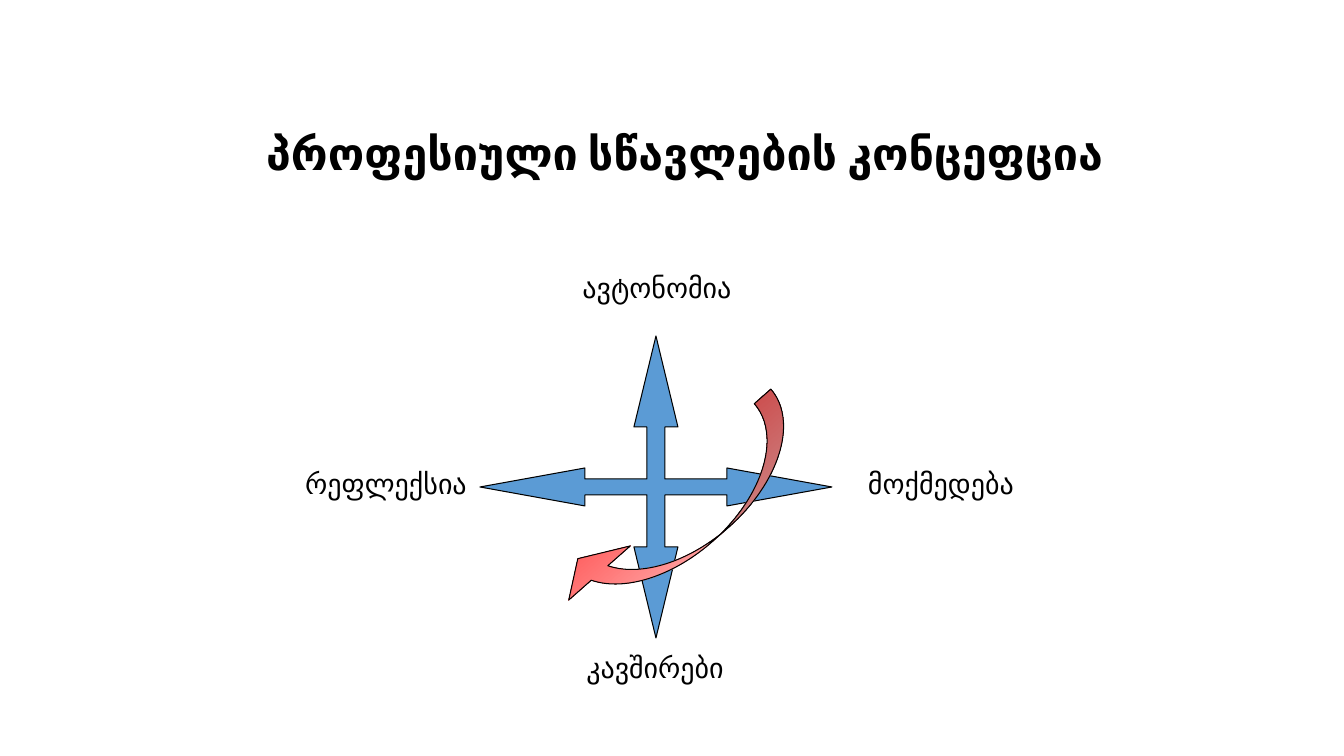
from pptx import Presentation
from pptx.dml.color import RGBColor
from pptx.enum.shapes import MSO_SHAPE
from pptx.enum.text import MSO_ANCHOR, MSO_AUTO_SIZE, PP_ALIGN
from pptx.util import Pt

PX = 914400 / 100.8
CURVED_ARROW = MSO_SHAPE.CURVED_DOWN_ARROW
TOP = MSO_ANCHOR.TOP
NO_FIT = MSO_AUTO_SIZE.NONE
CENTER = PP_ALIGN.CENTER
TITLE_ONLY = 5

BLACK = "000000"
BLUE = "5B9BD5"
WHITE = "FFFFFF"
RED = "FF0000"

LABEL_W, LABEL_H = 202, 44
LABELS = [
    ("ავტონომია", 556, 266, "Arial"),
    ("რეფლექსია", 285, 462, "Arial"),
    ("მოქმედება", 840, 462, "Arial"),
    ("კავშირები", 554, 646, "Calibri"),
]
CROSS_CENTER = (656, 487)
CROSS_QUARTER = [(0, 151), (22, 60), (9, 60), (9, 8), (71, 8), (71, 19), (176, 0)]


def px(n):
    return round(n * PX)


def rgb(value):
    return RGBColor.from_string(value)


def write(tf, text, size, font, bold=False):
    tf.word_wrap = True
    tf.auto_size = NO_FIT
    tf.vertical_anchor = TOP
    p = tf.paragraphs[0]
    p.alignment = CENTER
    r = p.add_run()
    r.text = text
    r.font.size = Pt(size)
    r.font.name = font
    r.font.bold = bold
    r.font.color.rgb = rgb(BLACK)
    return p


def set_title(s, text, x, y, w, h):
    sp = s.shapes.title
    sp.left, sp.top, sp.width, sp.height = px(x), px(y), px(w), px(h)
    p = write(sp.text_frame, text, 32, "Calibri", bold=True)
    p.line_spacing = 0.9


def add_label(s, text, x, y, font):
    sp = s.shapes.add_textbox(px(x), px(y), px(LABEL_W), px(LABEL_H))
    write(sp.text_frame, text, 20, font)


def outline(sp):
    sp.shadow.inherit = False
    sp.line.color.rgb = rgb(BLACK)
    sp.line.width = Pt(0.75)


def add_cross(s):
    cx, cy = CROSS_CENTER
    points = []
    for sx, sy, step in [(1, -1, 1), (1, 1, -1), (-1, 1, 1), (-1, -1, -1)]:
        points += [(cx + sx * dx, cy + sy * dy) for dx, dy in CROSS_QUARTER[::step][:-1]]
    builder = s.shapes.build_freeform(*points[0], scale=PX)
    builder.add_line_segments(points[1:], close=True)
    sp = builder.convert_to_shape()
    sp.fill.solid()
    sp.fill.fore_color.rgb = rgb(BLUE)
    outline(sp)


def add_curved_arrow(s, x, y, w, h, rotation):
    sp = s.shapes.add_shape(CURVED_ARROW, px(x), px(y), px(w), px(h))
    sp.rotation = rotation
    for i, value in enumerate([0.29, 1.08, 0.33]):
        sp.adjustments[i] = value
    sp.fill.gradient()
    sp.fill.gradient_angle = 270
    for stop, color, position in zip(sp.fill.gradient_stops, [WHITE, RED], [0, 1]):
        stop.color.rgb = rgb(color)
        stop.position = position
    outline(sp)


def main():
    prs = Presentation()
    prs.slide_width, prs.slide_height = px(1344), px(756)
    s = prs.slides.add_slide(prs.slide_layouts[TITLE_ONLY])
    set_title(s, "პროფესიული სწავლების კონცეფცია", 234, 127, 902, 94)
    add_cross(s)
    for label in LABELS:
        add_label(s, *label)
    add_curved_arrow(s, 535, 478, 298, 76, 138.7)
    prs.save("out.pptx")


if __name__ == "__main__":
    main()
